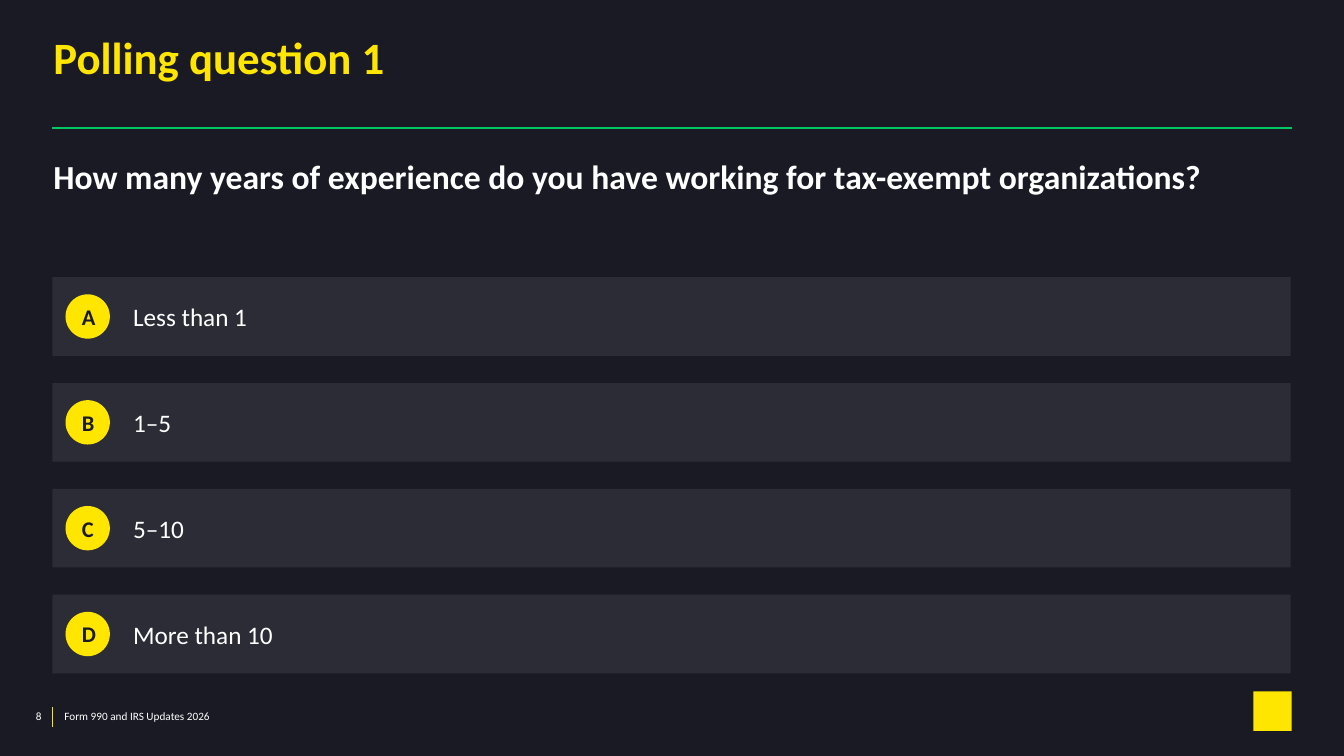
from dataclasses import dataclass

from lxml import etree
from pptx import Presentation, util as u
from pptx.dml.color import RGBColor
from pptx.enum import shapes, text
from pptx.oxml import ns

NIGHT = RGBColor(0x1A, 0x1A, 0x24)
YELLOW = RGBColor(0xFF, 0xE6, 0x00)
GREEN = RGBColor(0x00, 0xC8, 0x64)
GREY = RGBColor(0x74, 0x74, 0x80)
WHITE = RGBColor(0xFF, 0xFF, 0xFF)

LEFT, RIGHT, WIDTH = 0.52, 12.81, 12.28
FIRST_TOP, PITCH = 2.75, 1.05
BAR_HEIGHT, BADGE_SIZE = 0.78, 0.44


@dataclass(frozen=True)
class Box:
    left: float
    top: float
    width: float
    height: float

    def lengths(self) -> list:
        return [u.Inches(v) for v in (self.left, self.top, self.width, self.height)]


@dataclass(frozen=True)
class Answer:
    letter: str
    wording: str


@dataclass(frozen=True)
class Rule:
    start: tuple[float, float]
    end: tuple[float, float]
    color: RGBColor
    weight: float


ANSWERS = [
    Answer("A", "Less than 1"),
    Answer("B", "1–5"),
    Answer("C", "5–10"),
    Answer("D", "More than 10"),
]
RULES = [
    Rule((LEFT, 7.01), (LEFT, 7.21), YELLOW, 1),
    Rule((LEFT, 1.27), (RIGHT, 1.27), GREEN, 2),
]


def write(shape, wording: str, *, size: float, color: RGBColor = WHITE,
          bold: bool = False, align=text.PP_ALIGN.LEFT,
          anchor=text.MSO_ANCHOR.TOP, insets=(0, 0, 0, 0),
          spacing: float = 1.0) -> None:
    frame = shape.text_frame
    frame.word_wrap = True
    frame.vertical_anchor = anchor
    (frame.margin_left, frame.margin_top,
     frame.margin_right, frame.margin_bottom) = [u.Inches(i) for i in insets]
    paragraph = frame.paragraphs[0]
    paragraph.alignment = align
    paragraph.line_spacing = spacing
    run = paragraph.add_run()
    run.text = wording
    run.font.name = "Calibri"
    run.font.size = u.Pt(size)
    run.font.bold = bold
    run.font.color.rgb = color


def add_label(slide, box: Box, wording: str, **style) -> None:
    write(slide.shapes.add_textbox(*box.lengths()), wording, **style)


def add_solid(slide, preset, box: Box, color: RGBColor, opacity: int = 100):
    shape = slide.shapes.add_shape(preset, *box.lengths())
    shape.shadow.inherit = False
    shape.fill.solid()
    shape.fill.fore_color.rgb = color
    shape.line.fill.background()
    if opacity < 100:
        tint = shape._element.spPr.find(".//" + ns.qn("a:srgbClr"))
        etree.SubElement(tint, ns.qn("a:alpha")).set("val", str(opacity * 1000))
    return shape


def add_rule(slide, rule: Rule) -> None:
    ends = [u.Inches(v) for v in rule.start + rule.end]
    line = slide.shapes.add_connector(shapes.MSO_CONNECTOR.STRAIGHT, *ends)
    line.line.color.rgb = rule.color
    line.line.width = u.Pt(rule.weight)
    etree.SubElement(line._element.spPr, ns.qn("a:effectLst"))


def add_answer(slide, answer: Answer, top: float) -> None:
    bar = add_solid(slide, shapes.MSO_SHAPE.RECTANGLE,
                    Box(LEFT, top, WIDTH, BAR_HEIGHT), GREY, opacity=20)
    write(bar, answer.wording, size=18, anchor=text.MSO_ANCHOR.MIDDLE,
          insets=(0.8, 0, 0, 0))
    badge_top = top + (BAR_HEIGHT - BADGE_SIZE) / 2
    badge = add_solid(slide, shapes.MSO_SHAPE.OVAL,
                      Box(0.65, badge_top, BADGE_SIZE, BADGE_SIZE), YELLOW)
    write(badge, answer.letter, size=16, color=NIGHT, bold=True,
          align=text.PP_ALIGN.CENTER, anchor=text.MSO_ANCHOR.MIDDLE,
          insets=(0.1, 0.1, 0.1, 0.1))


def main() -> None:
    deck = Presentation()
    deck.slide_width, deck.slide_height = u.Inches(13.33), u.Inches(7.5)
    slide = deck.slides.add_slide(deck.slide_layouts[6])
    slide.background.fill.solid()
    slide.background.fill.fore_color.rgb = NIGHT

    add_solid(slide, shapes.MSO_SHAPE.RECTANGLE, Box(12.43, 6.86, 0.38, 0.39), YELLOW)
    for rule in RULES:
        add_rule(slide, rule)
    add_label(slide, Box(0.54, 7.04, 6, 0.13), "Form 990 and IRS Updates 2026",
              size=8, insets=(0.1, 0, 0, 0))
    add_label(slide, Box(0.11, 7.04, 0.4, 0.13), "8", size=8,
              align=text.PP_ALIGN.RIGHT, insets=(0, 0, 0.1, 0))
    add_label(slide, Box(0.53, 0.38, WIDTH, 0.51), "Polling question 1",
              size=32, color=YELLOW, bold=True, spacing=0.85)
    add_label(slide, Box(0.53, 1.55, WIDTH, 0.81),
              "How many years of experience do you have working for "
              "tax-exempt organizations?", size=24, bold=True)
    for row, answer in enumerate(ANSWERS):
        add_answer(slide, answer, FIRST_TOP + row * PITCH)

    deck.save("out.pptx")


if __name__ == "__main__":
    main()
